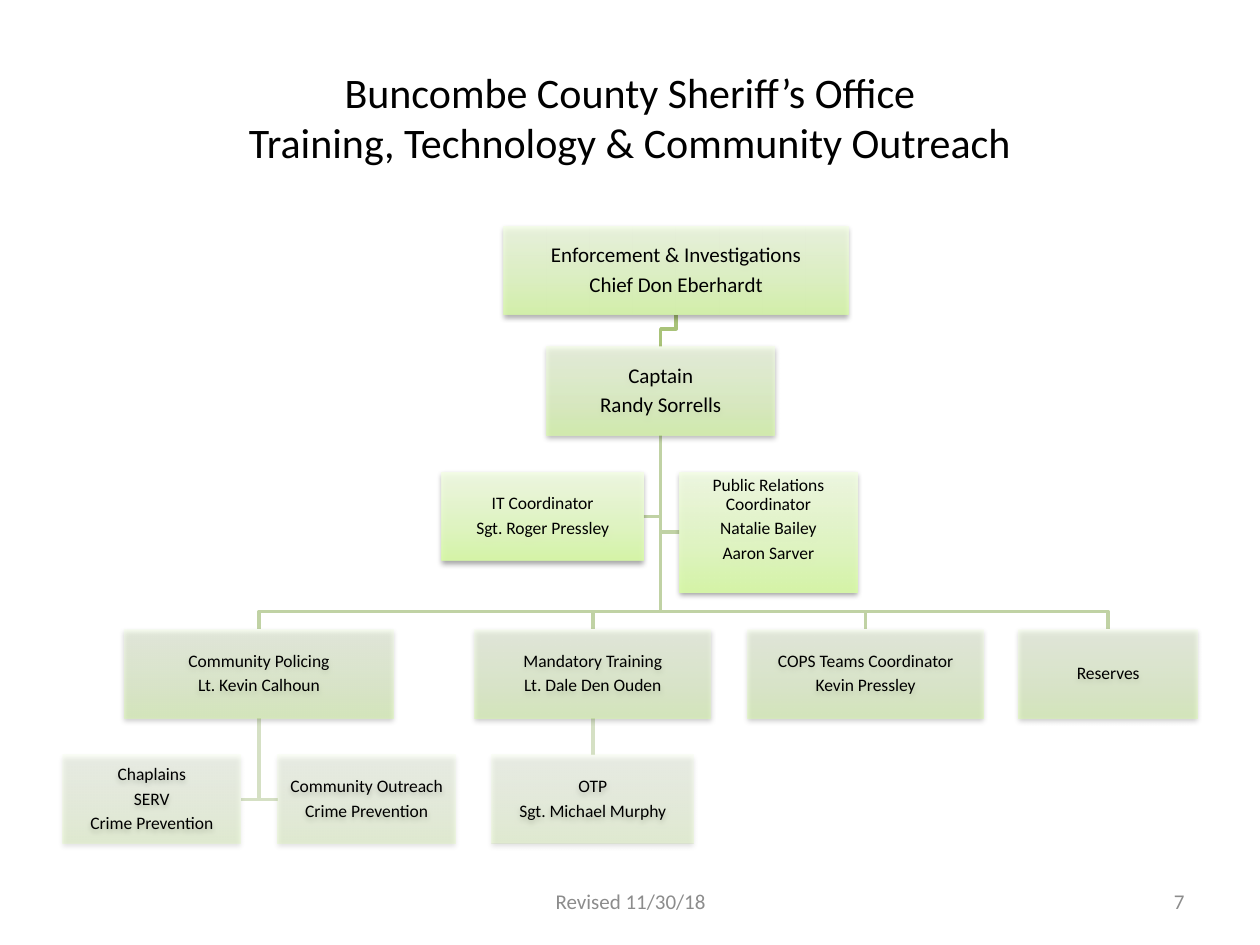
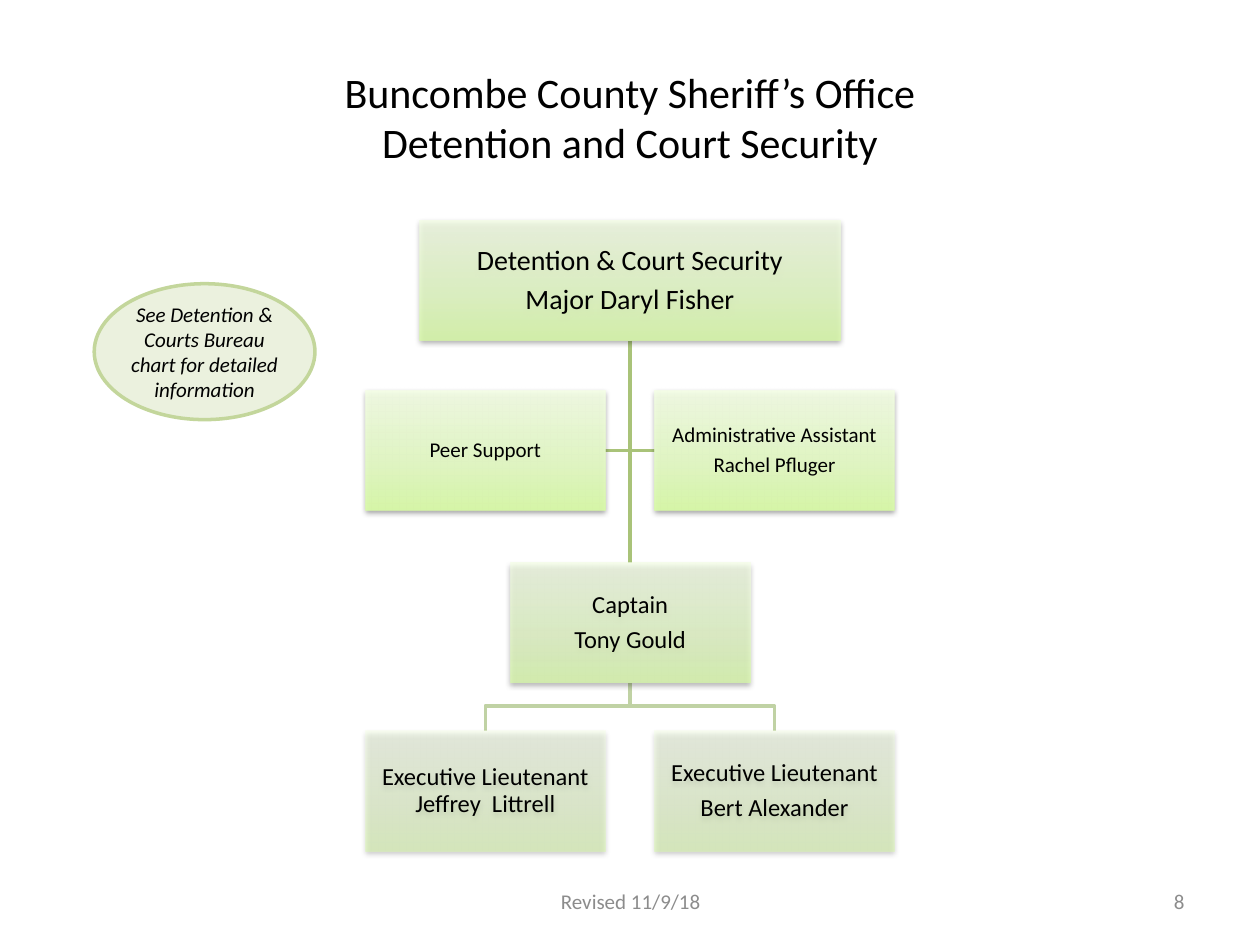
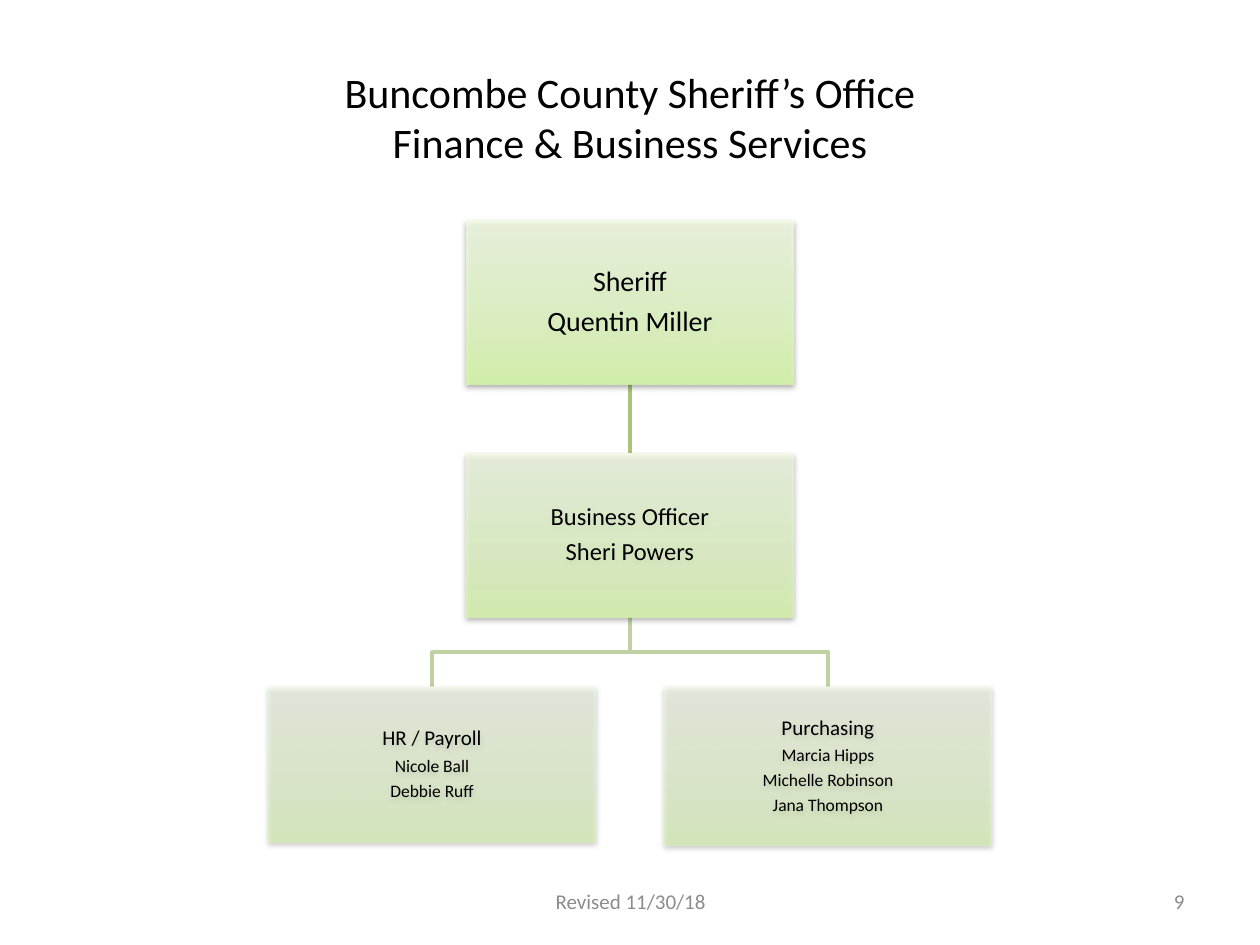
from dataclasses import dataclass

from lxml.etree import SubElement
from pptx import Presentation
from pptx.dml.color import RGBColor
from pptx.enum.shapes import MSO_CONNECTOR, MSO_SHAPE
from pptx.enum.text import MSO_ANCHOR, MSO_AUTO_SIZE, PP_ALIGN
from pptx.oxml.ns import qn
from pptx.util import Cm, Pt

FONT = "Calibri"
BLACK = "000000"
GREY = "8C8C8C"
TOP_LINK = "A9C379"
MIDDLE_LINK = "C0D2A4"
LOW_LINK = "D5E0C4"
NOTE_FILL = "EBF1DE"
NOTE_LINE = "C3D69B"
BOX_GRADIENT = [(0, "DAFDA7"), (35, "E4FCC2"), (100, "F5FFE7")]
CHIEF, CAPTAIN, UNIT, TEAM, ASSISTANT = 80, 70, 50, 30, 90
OFFICE = "Buncombe County Sheriff’s Office"


@dataclass
class Box:
    left: float
    top: float
    width: float
    height: float
    opacity: int
    size: int
    lines: list
    detail_size: int = 0
    bottom_inset: float = 0.03

    @property
    def right(self):
        return self.left + self.width

    @property
    def bottom(self):
        return self.top + self.height

    @property
    def center(self):
        return self.left + self.width / 2

    @property
    def middle(self):
        return self.top + self.height / 2


def color(value):
    return RGBColor.from_string(value)


def add_span(para, text, size, value=BLACK, italic=False):
    span = para.add_run()
    span.text = text
    span.font.name = FONT
    span.font.size = Pt(size)
    span.font.color.rgb = color(value)
    span.font.italic = italic


def set_insets(frame, side, bottom):
    frame.margin_left = frame.margin_right = frame.margin_top = Cm(side)
    frame.margin_bottom = Cm(bottom)
    frame.vertical_anchor = MSO_ANCHOR.MIDDLE
    frame.word_wrap = True


def add_color_node(parent, value, opacity):
    node = SubElement(parent, qn("a:srgbClr"), val=value)
    SubElement(node, qn("a:alpha"), val=str(opacity * 1000))


def fill_with_gradient(shape, opacity):
    shape.fill.background()
    properties = shape.element.spPr
    gradient = SubElement(properties, qn("a:gradFill"), rotWithShape="1")
    stops = SubElement(gradient, qn("a:gsLst"))
    for position, value in BOX_GRADIENT:
        stop = SubElement(stops, qn("a:gs"), pos=str(position * 1000))
        add_color_node(stop, value, opacity)
    SubElement(gradient, qn("a:lin"), ang="16200000", scaled="0")
    properties.replace(properties.find(qn("a:noFill")), gradient)


def add_soft_shadow(shape):
    shape.shadow.inherit = False
    effects = shape.element.spPr.find(qn("a:effectLst"))
    shadow = SubElement(effects, qn("a:outerShdw"), blurRad="40000",
                        dist="20000", dir="5400000", rotWithShape="0")
    add_color_node(shadow, BLACK, 38)


def add_box(page, box):
    shape = page.shapes.add_shape(
        MSO_SHAPE.RECTANGLE, Cm(box.left), Cm(box.top), Cm(box.width), Cm(box.height))
    fill_with_gradient(shape, box.opacity)
    shape.line.fill.background()
    add_soft_shadow(shape)
    frame = shape.text_frame
    set_insets(frame, 0.03, box.bottom_inset)
    for index, text in enumerate(box.lines):
        para = frame.add_paragraph() if index else frame.paragraphs[0]
        size = box.detail_size if index and box.detail_size else box.size
        para.alignment = PP_ALIGN.CENTER
        para.line_spacing = 0.9
        para.space_after = Pt(size * 0.33)
        add_span(para, text, size)


def add_link(page, points, value):
    points = [(Cm(x), Cm(y)) for x, y in points]
    if len(points) == 2:
        link = page.shapes.add_connector(MSO_CONNECTOR.STRAIGHT, *points[0], *points[1])
        SubElement(link.element.spPr, qn("a:effectLst"))
    else:
        builder = page.shapes.build_freeform(*points[0])
        builder.add_line_segments(points[1:], close=False)
        link = builder.convert_to_shape()
        link.fill.background()
        link.shadow.inherit = False
    link.line.color.rgb = color(value)
    link.line.width = Pt(2)


def link_below(page, parent, children, value, gap=0.36):
    for child in children:
        start, end = (parent.center, parent.bottom), (child.center, child.top)
        bend = child.top - gap
        if abs(parent.center - child.center) < 0.02:
            points = [start, (parent.center, child.top)]
        else:
            points = [start, (parent.center, bend), (child.center, bend), end]
        add_link(page, points, value)


def link_beside(page, parent, children, value):
    for child in children:
        edge = child.left if child.left > parent.center else child.right
        add_link(page, [(parent.center, parent.bottom), (parent.center, child.middle),
                        (edge, child.middle)], value)


def add_label(page, left, width, text, alignment):
    box = page.shapes.add_textbox(Cm(left), Cm(17.65), Cm(width), Cm(1.02))
    box.text_frame.word_wrap = True
    box.text_frame.vertical_anchor = MSO_ANCHOR.MIDDLE
    para = box.text_frame.paragraphs[0]
    para.alignment = alignment
    add_span(para, text, 12, GREY)


def add_page(deck, heading, revised, number):
    page = deck.slides.add_slide(deck.slide_layouts[5])
    title = page.shapes.title
    title.left, title.top = Cm(1.27), Cm(0.76)
    title.width, title.height = Cm(22.86), Cm(3.18)
    title.text_frame.auto_size = MSO_AUTO_SIZE.NONE
    title.text_frame.vertical_anchor = MSO_ANCHOR.MIDDLE
    para = title.text_frame.paragraphs[0]
    para.alignment = PP_ALIGN.CENTER
    add_span(para, OFFICE, 24)
    para.add_line_break()
    add_span(para, heading, 24)
    add_label(page, 8.69, 8.05, f"Revised {revised}", PP_ALIGN.CENTER)
    add_label(page, 18.21, 5.92, str(number), PP_ALIGN.RIGHT)
    return page


def add_note(page, text):
    note = page.shapes.add_shape(MSO_SHAPE.OVAL, Cm(1.9), Cm(5.72), Cm(4.45), Cm(2.74))
    note.shadow.inherit = False
    note.fill.solid()
    note.fill.fore_color.rgb = color(NOTE_FILL)
    note.line.color.rgb = color(NOTE_LINE)
    note.line.width = Pt(2)
    set_insets(note.text_frame, 0, 0)
    para = note.text_frame.paragraphs[0]
    para.alignment = PP_ALIGN.CENTER
    add_span(para, text, 12, italic=True)


def add_outreach_page(deck):
    page = add_page(deck, "Training, Technology & Community Outreach", "11/30/18", 7)
    height, unit_top, team_top = 1.79, 12.69, 15.22
    chief = Box(10.16, 4.56, 6.94, height, CHIEF, 12,
                ["Enforcement & Investigations", "Chief Don Eberhardt"])
    captain = Box(11.02, 6.99, 4.6, height, CAPTAIN, 12, ["Captain", "Randy Sorrells"])
    technology = Box(8.91, 9.52, 4.06, height, ASSISTANT, 10,
                     ["IT Coordinator", "Sgt. Roger Pressley"])
    relations = Box(13.7, 9.52, 3.58, 2.42, ASSISTANT, 10,
                    ["Public Relations Coordinator", "Natalie Bailey", "Aaron Sarver"],
                    bottom_inset=0.53)
    policing = Box(2.51, unit_top, 5.42, height, UNIT, 10,
                   ["Community Policing", "Lt. Kevin Calhoun"])
    training = Box(9.57, unit_top, 4.76, height, UNIT, 10,
                   ["Mandatory Training", "Lt. Dale Den Ouden"])
    teams = Box(15.08, unit_top, 4.74, height, UNIT, 10,
                ["COPS Teams Coordinator", "Kevin Pressley"])
    reserves = Box(20.54, unit_top, 3.6, height, UNIT, 10, ["Reserves"])
    chaplains = Box(1.27, team_top, 3.58, height, TEAM, 10,
                    ["Chaplains", "SERV", "Crime Prevention"])
    outreach = Box(5.6, team_top, 3.58, height, TEAM, 10,
                   ["Community Outreach", "Crime Prevention"])
    murphy = Box(9.92, team_top, 4.06, height, TEAM, 10, ["OTP", "Sgt. Michael Murphy"])

    link_beside(page, captain, [relations, technology], MIDDLE_LINK)
    link_below(page, captain, [reserves, teams, training, policing], MIDDLE_LINK)
    link_below(page, training, [murphy], LOW_LINK)
    link_beside(page, policing, [outreach, chaplains], LOW_LINK)
    link_below(page, chief, [captain], TOP_LINK)
    for box in [chief, captain, policing, chaplains, outreach, training, murphy,
                teams, reserves, technology, relations]:
        add_box(page, box)


def add_detention_page(deck):
    page = add_page(deck, "Detention and Court Security", "11/9/18", 8)
    left, right, width, height = 7.37, 13.2, 4.83, 2.42
    major = Box(8.46, 4.45, 8.48, height, CHIEF, 16,
                ["Detention & Court Security", "Major Daryl Fisher"])
    captain = Box(10.29, 11.35, width, height, CAPTAIN, 14, ["Captain", "Tony Gould"])
    littrell = Box(left, 14.74, width, height, UNIT, 14,
                   ["Executive Lieutenant Jeffrey  Littrell"])
    alexander = Box(right, 14.74, width, height, UNIT, 14,
                    ["Executive Lieutenant", "Bert Alexander"])
    support = Box(left, 7.87, width, height, ASSISTANT, 12, ["Peer Support"])
    assistant = Box(right, 7.87, width, height, ASSISTANT, 12,
                    ["Administrative Assistant", "Rachel Pfluger"])

    link_beside(page, major, [assistant, support], TOP_LINK)
    link_below(page, captain, [alexander, littrell], MIDDLE_LINK, gap=0.51)
    link_below(page, major, [captain], TOP_LINK)
    for box in [major, captain, littrell, alexander, support, assistant]:
        add_box(page, box)
    add_note(page, "See Detention & Courts Bureau chart for detailed information")


def add_finance_page(deck):
    page = add_page(deck, "Finance & Business Services", "11/30/18", 9)
    width, height = 6.6, 3.3
    sheriff = Box(9.4, 4.45, width, height, CHIEF, 16, ["Sheriff", "Quentin Miller"])
    officer = Box(9.4, 9.14, width, height, CAPTAIN, 14,
                  ["Business Officer", "Sheri Powers"])
    payroll = Box(5.41, 13.84, width, 3.14, UNIT, 12,
                  ["HR / Payroll", "Nicole Ball", "Debbie Ruff"], detail_size=10)
    purchasing = Box(13.39, 13.84, width, 3.2, UNIT, 12,
                     ["Purchasing", "Marcia Hipps", "Michelle Robinson", "Jana Thompson"],
                     detail_size=10)

    link_below(page, officer, [purchasing, payroll], MIDDLE_LINK, gap=0.7)
    link_below(page, sheriff, [officer], TOP_LINK)
    for box in [sheriff, officer, payroll, purchasing]:
        add_box(page, box)


def main():
    deck = Presentation()
    deck.slide_width, deck.slide_height = Cm(25.4), Cm(19.05)
    add_outreach_page(deck)
    add_detention_page(deck)
    add_finance_page(deck)
    deck.save("out.pptx")


if __name__ == "__main__":
    main()
